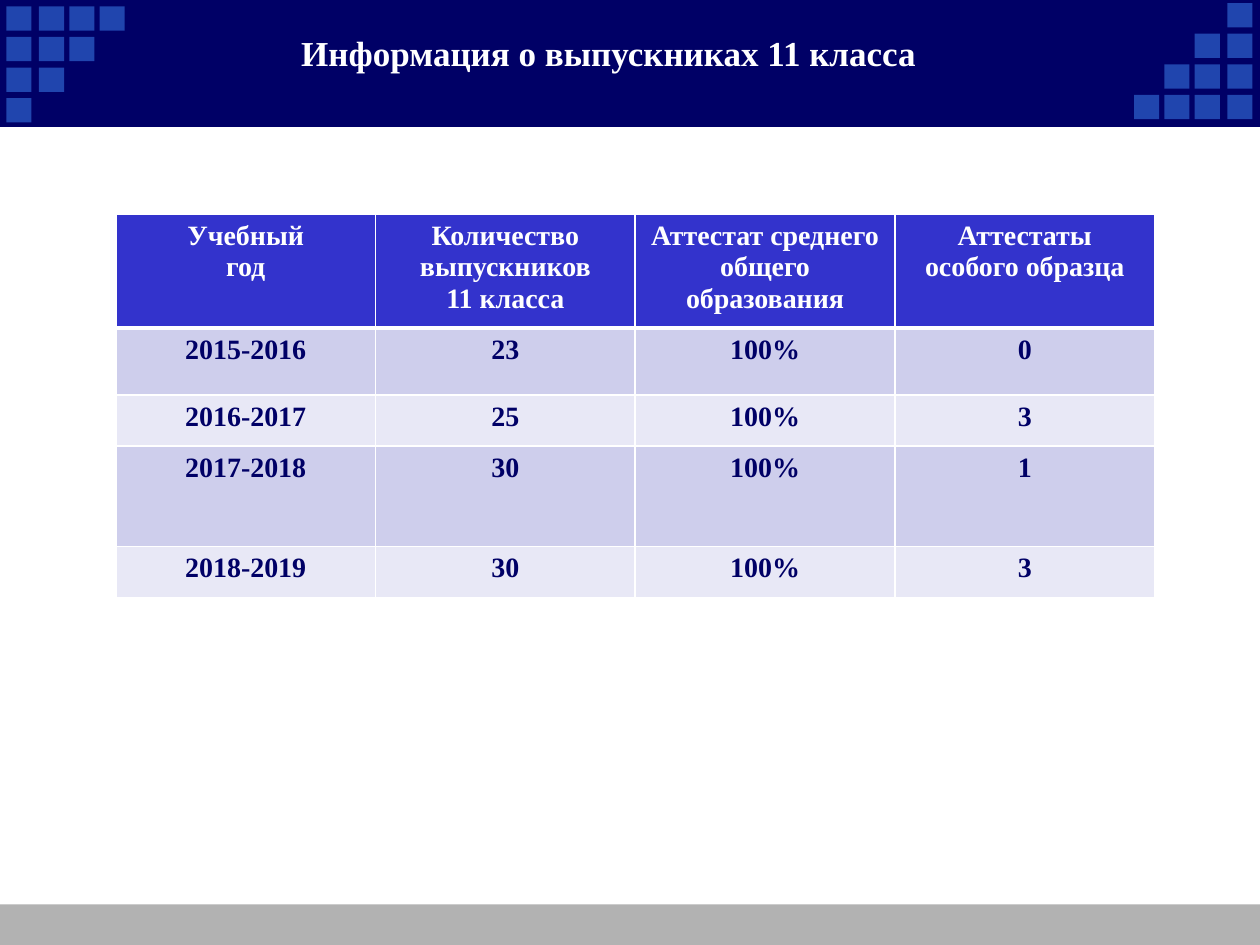
from lxml import etree
from pptx import Presentation
from pptx.dml.color import RGBColor
from pptx.enum.shapes import MSO_SHAPE
from pptx.enum.text import MSO_ANCHOR, PP_ALIGN
from pptx.oxml.ns import qn
from pptx.util import Pt

RECT = MSO_SHAPE.RECTANGLE
MIDDLE = MSO_ANCHOR.MIDDLE
CENTER = PP_ALIGN.CENTER

FONT = "Times New Roman"
WHITE, NAVY, BLUE = "FFFFFF", "000066", "2045AE"
GRAY, HEAD, DARK, LIGHT = "B2B2B2", "3333CC", "CECEEC", "E8E8F6"

ROWS = [
    ["Учебный\nгод", "Количество выпускников\n11 класса",
     "Аттестат среднего общего образования", "Аттестаты особого образца"],
    ["2015-2016", "23", "100%", "0"],
    ["2016-2017", "25", "100%", "3"],
    ["2017-2018", "30", "100%", "1"],
    ["2018-2019", "30", "100%", "3"],
]
HEIGHTS = [64, 38.2, 29.2, 57.6, 29.2]


def color(code):
    return RGBColor.from_string(code)


def add_rect(shapes, box, fill, line=None):
    rect = shapes.add_shape(RECT, *map(Pt, box))
    rect.shadow.inherit = False
    rect.fill.solid()
    rect.fill.fore_color.rgb = color(fill)
    if line:
        rect.line.color.rgb = color(line)
        rect.line.width = Pt(0.75)
    else:
        rect.line.fill.background()
    return rect


def set_text(frame, text, size, code):
    frame.text = text
    for par in frame.paragraphs:
        par.alignment = CENTER
        par.font.name = FONT
        par.font.size = Pt(size)
        par.font.bold = True
        par.font.color.rgb = color(code)


def add_steps(slide, box, turned=False):
    left, top, width, height = box
    wide, high = 14.4, 13.9
    group = slide.shapes.add_group_shape()
    for row in range(4):
        for dx in (0, 18.7, 36, 53.3)[:4 - row]:
            dy = row * 17.5
            x, y = left + dx, top + dy
            if turned:
                x = left + width - wide - dx
                y = top + height - high - dy
            tile = add_rect(group.shapes, (x, y, wide, high), BLUE)
            tile.rotation = 180 if turned else 0


def add_header(slide, box):
    left, top, width, height = box
    add_rect(slide.shapes, box, NAVY, NAVY)
    add_steps(slide, (left + 3.6, top + 3.6, 67.7, 66.4))
    add_steps(slide, (left + width - 72, top + 1.7, 67.7, 66.4), True)
    title = slide.shapes.add_textbox(
        Pt(left + 41.8), Pt(top + 5.8), Pt(612), Pt(48.2))
    frame = title.text_frame
    frame.word_wrap = True
    frame.vertical_anchor = MIDDLE
    set_text(frame, "Информация о выпускниках 11 класса", 20, WHITE)


def set_edges(cell, edges):
    props = cell._tc.get_or_add_tcPr()
    for spot, (side, width) in enumerate(edges.items()):
        line = etree.Element(qn(f"a:ln{side}"), w=str(Pt(width)))
        fill = etree.SubElement(line, qn("a:solidFill"))
        etree.SubElement(fill, qn("a:srgbClr"), val=WHITE)
        props.insert(spot, line)


def add_grid(slide, box):
    table = slide.shapes.add_table(
        len(ROWS), len(ROWS[0]), *map(Pt, box)).table
    for col in table.columns:
        col.width = Pt(box[2] / len(ROWS[0]))
    for i, (texts, height) in enumerate(zip(ROWS, HEIGHTS)):
        table.rows[i].height = Pt(height)
        shade = HEAD if i == 0 else DARK if i % 2 else LIGHT
        edges = {"L": 1, "R": 1, "T": 3 if i == 1 else 1,
                 "B": 3 if i == 0 else 1}
        for j, text in enumerate(texts):
            cell = table.cell(i, j)
            cell.fill.solid()
            cell.fill.fore_color.rgb = color(shade)
            set_text(cell.text_frame, text, 16, NAVY if i else WHITE)
            set_edges(cell, edges)


def main():
    deck = Presentation()
    deck.slide_width, deck.slide_height = Pt(720), Pt(540)
    slide = deck.slides.add_slide(deck.slide_layouts[6])
    add_rect(slide.shapes, (0, 516.8, 720, 23.5), GRAY)
    add_header(slide, (0, 0, 720, 72))
    add_grid(slide, (66.2, 122.6, 593.6, sum(HEIGHTS)))
    deck.save("out.pptx")


if __name__ == "__main__":
    main()
